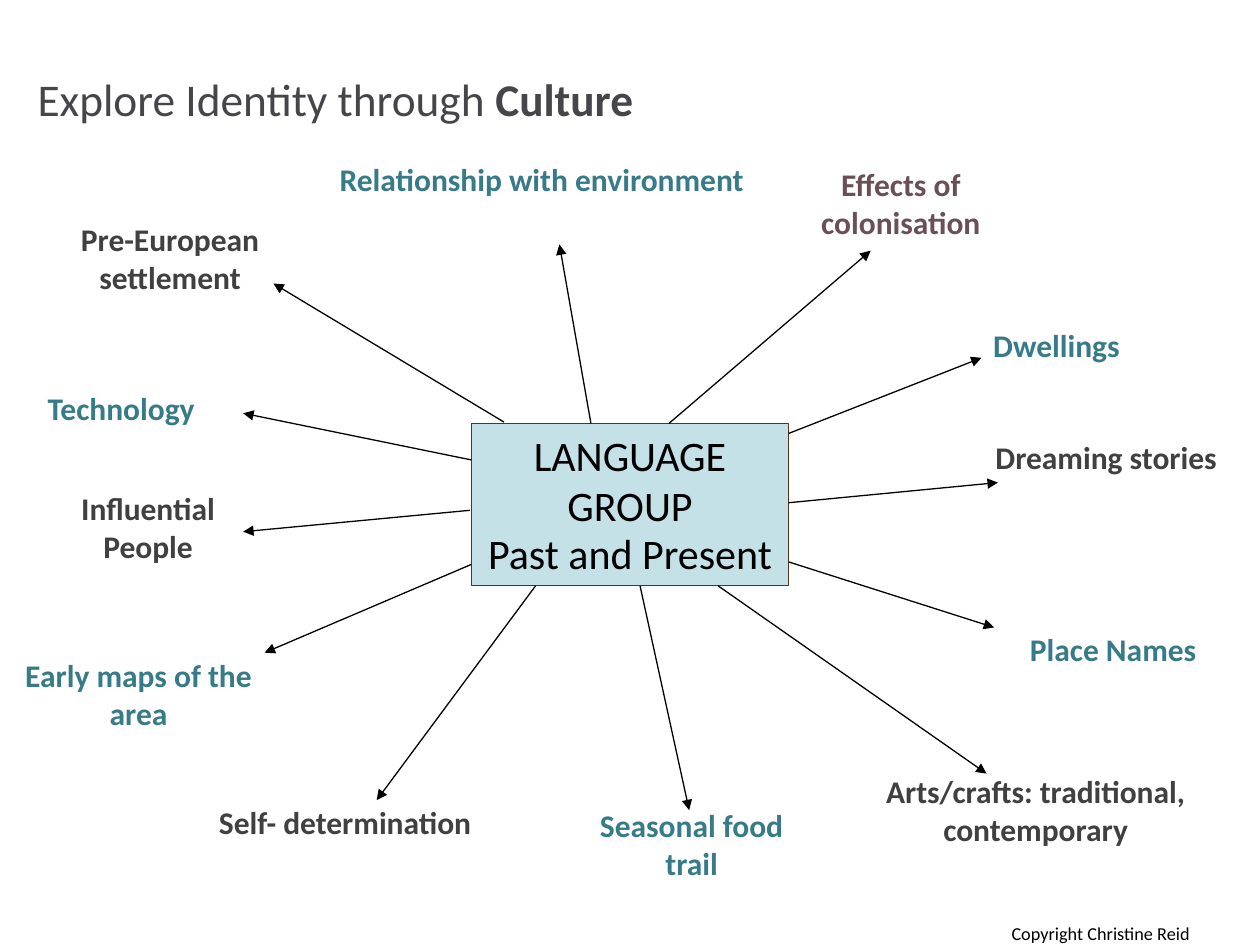
from lxml import etree
from pptx import Presentation
from pptx.dml.color import RGBColor
from pptx.enum import shapes, text
from pptx.oxml.ns import qn
from pptx.util import Inches, Pt

TEAL, GREY, PLUM, BLACK = "377B89", "404040", "6A4F57", "000000"
CENTER, LEFT = text.PP_ALIGN.CENTER, text.PP_ALIGN.LEFT

# Topic, colour, label box (left, top, width, height), arrow start, arrow end
TOPICS = [
    ("Relationship with environment", TEAL, (2.41, 1.22, 3.78, 0.71), (4.69, 3.36), (4.44, 1.94)),
    ("Effects of colonisation", PLUM, (6.01, 1.26, 2.28, 0.71), (5.31, 3.36), (6.91, 1.99)),
    ("Dwellings", TEAL, (7.6, 2.54, 1.57, 0.4), (6.26, 3.44), (7.79, 2.84)),
    ("Dreaming stories", GREY, (7.75, 3.43, 2.06, 0.71), (6.26, 3.99), (7.92, 3.83)),
    ("Place Names", TEAL, (7.91, 4.95, 1.85, 0.4), (6.26, 4.46), (7.89, 4.98)),
    ("Arts/crafts: traditional, contemporary", GREY, (6.92, 6.08, 2.6, 1.01), (5.7, 4.65), (7.83, 6.14)),
    ("Seasonal food trail", TEAL, (4.61, 6.35, 1.76, 0.71), (5.08, 4.65), (5.47, 6.43)),
    ("Self- determination", GREY, (1.56, 6.32, 2.36, 0.71), (4.25, 4.65), (2.99, 6.35)),
    ("Early maps of the area", TEAL, (0.06, 5.16, 2.08, 0.71), (3.74, 4.48), (2.1, 5.18)),
    ("Influential People", GREY, (0.28, 3.83, 1.79, 0.71), (3.73, 4.05), (1.93, 4.22)),
    ("Technology", TEAL, (0.28, 3.04, 1.77, 0.4), (3.74, 3.65), (1.93, 3.28)),
    ("Pre-European settlement", GREY, (0, 1.7, 2.7, 0.71), (4, 3.35), (2.17, 2.25)),
]


def rgb(value):
    return RGBColor.from_string(value)


def inches(values):
    return [Inches(value) for value in values]


def style(run, size, color, bold=False):
    run.font.name = "Calibri"
    run.font.size = Pt(size)
    run.font.bold = bold
    run.font.color.rgb = rgb(color)


def add_label(slide, box, words, size, color, bold=False, align=CENTER, wrap=True):
    label = slide.shapes.add_textbox(*inches(box))
    frame = label.text_frame
    frame.word_wrap = wrap
    frame.text = words
    paragraph = frame.paragraphs[0]
    paragraph.alignment = align
    style(paragraph.runs[0], size, color, bold)
    return paragraph


def add_title(slide, box):
    heading = add_label(slide, box, "Explore Identity through ", 25.9, "46464A", align=LEFT)
    heading.line_spacing = 0.8
    emphasis = heading.add_run()
    emphasis.text = "Culture"
    style(emphasis, 25.9, "46464A", bold=True)


def add_hub(slide, box):
    hub = slide.shapes.add_shape(shapes.MSO_SHAPE.RECTANGLE, *inches(box))
    hub.shadow.inherit = False
    hub.fill.solid()
    hub.fill.fore_color.rgb = rgb("C3E1E7")
    hub.line.color.rgb = rgb("51361B")
    hub.line.width = Pt(0.75)
    frame = hub.text_frame
    frame.word_wrap = True
    frame.vertical_anchor = text.MSO_ANCHOR.TOP
    frame.text = "LANGUAGE GROUP\nPast and Present"
    for paragraph in frame.paragraphs:
        paragraph.alignment = CENTER
        style(paragraph.runs[0], 24, BLACK)
    period = frame.paragraphs[1]
    period.line_spacing = 0.8
    period.space_before = Pt(4)


def add_arrow(slide, start, end):
    arrow = slide.shapes.add_connector(
        shapes.MSO_CONNECTOR.STRAIGHT, *inches(start), *inches(end))
    arrow.line.color.rgb = rgb(BLACK)
    arrow.line.width = Pt(0.75)
    etree.SubElement(arrow.line._get_or_add_ln(), qn("a:tailEnd"), type="triangle")
    etree.SubElement(arrow._element.spPr, qn("a:effectLst"))


def add_copyright(slide, box):
    notice = add_label(slide, box, "Copyright Christine Reid", 18, BLACK, align=LEFT, wrap=False)
    notice.runs[0].font._element.set("baseline", "-25000")  # subscript


def main():
    deck = Presentation()
    deck.slide_width, deck.slide_height = inches((10, 7.5))
    slide = deck.slides.add_slide(deck.slide_layouts[6])

    add_title(slide, (0.2, 0.6, 5.67, 0.48))
    add_hub(slide, (3.74, 3.36, 2.52, 1.29))

    # Topics around the hub
    for topic, color, box, start, end in TOPICS:
        align = LEFT if topic == "Technology" else CENTER
        add_label(slide, box, topic, 18, color, bold=True, align=align)
        add_arrow(slide, start, end)

    add_copyright(slide, (7.93, 7.1, 1.84, 0.3))
    deck.save("out.pptx")


if __name__ == "__main__":
    main()
